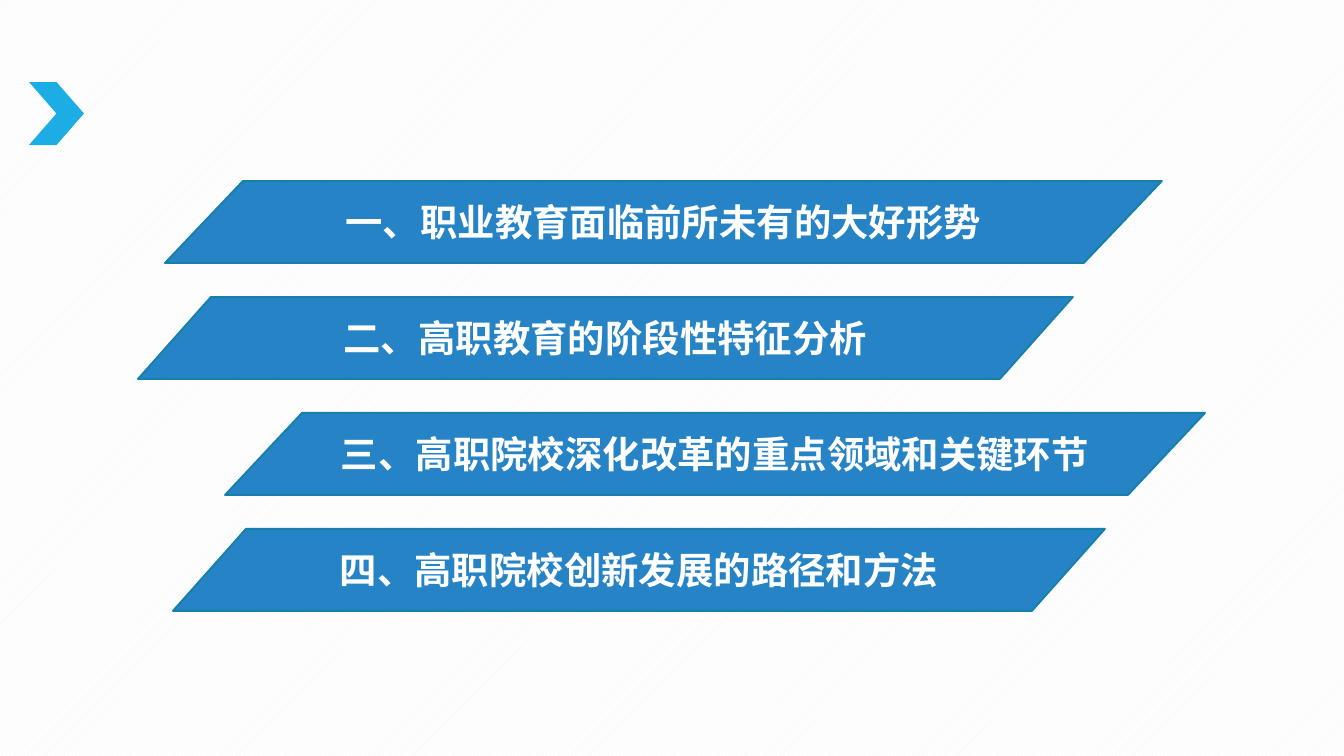
from pptx import Presentation
from pptx.dml.color import RGBColor
from pptx.enum.dml import MSO_PATTERN
from pptx.enum.shapes import MSO_SHAPE
from pptx.enum.text import MSO_ANCHOR, PP_ALIGN
from pptx.oxml.ns import qn
from pptx.util import Emu, Pt
from lxml.etree import SubElement

EMU_PER_PX = 914400 / 134.4
FONT = "Noto Sans CJK SC"
WHITE = RGBColor(0xFF, 0xFF, 0xFF)
PALE_GREY = RGBColor(0xF2, 0xF2, 0xF2)
CYAN = RGBColor(0x1C, 0xAD, 0xE4)
BLUE = RGBColor(0x26, 0x83, 0xC6)
EDGE_BLUE = RGBColor(0x15, 0x80, 0xA9)

BAR_TOP, BAR_STEP, BAR_HEIGHT = 181, 116, 82
BARS = [
    (165, 1162, 78, "一、职业教育面临前所未有的大好形势"),
    (138, 1073, 73, "二、高职教育的阶段性特征分析"),
    (225, 1205, 77, "三、高职院校深化改革的重点领域和关键环节"),
    (173, 1105, 73, "四、高职院校创新发展的路径和方法"),
]


def px(n):
    return Emu(round(n * EMU_PER_PX))


def set_background(s):
    fill = s.background.fill
    fill.patterned()
    fill.pattern = MSO_PATTERN.LIGHT_UPWARD_DIAGONAL
    fill.fore_color.rgb = PALE_GREY
    fill.back_color.rgb = WHITE


def paint(sp, color):
    sp.shadow.inherit = False
    sp.fill.solid()
    sp.fill.fore_color.rgb = color


def add_chevron(s, left, top, width, height):
    sp = s.shapes.add_shape(MSO_SHAPE.CHEVRON, px(left), px(top), px(width), px(height))
    paint(sp, CYAN)
    sp.line.fill.background()


def set_text(sp, text):
    tf = sp.text_frame
    tf.text = text
    tf.word_wrap = True
    tf.vertical_anchor = MSO_ANCHOR.MIDDLE
    tf.margin_left = tf.margin_right = px(17)
    tf.margin_top = tf.margin_bottom = px(4)
    p = tf.paragraphs[0]
    p.alignment = PP_ALIGN.CENTER
    r = p.runs[0]
    r.font.size = Pt(20)
    r.font.bold = True
    r.font.color.rgb = WHITE
    r.font.name = FONT
    SubElement(r.font._element, qn("a:ea")).set("typeface", FONT)


def add_bar(s, left, right, top, slant, text):
    bottom = top + BAR_HEIGHT
    builder = s.shapes.build_freeform(left + slant, top, scale=EMU_PER_PX)
    builder.add_line_segments(
        [(right, top), (right - slant, bottom), (left, bottom)], close=True
    )
    sp = builder.convert_to_shape()
    paint(sp, BLUE)
    sp.line.color.rgb = EDGE_BLUE
    sp.line.width = Pt(1)
    set_text(sp, text)


def main():
    prs = Presentation()
    prs.slide_width, prs.slide_height = px(1344), px(756)
    s = prs.slides.add_slide(prs.slide_layouts[6])
    set_background(s)
    add_chevron(s, 29, 82, 55, 63)
    for i, (left, right, slant, text) in enumerate(BARS):
        add_bar(s, left, right, BAR_TOP + i * BAR_STEP, slant, text)
    prs.save("out.pptx")


if __name__ == "__main__":
    main()
